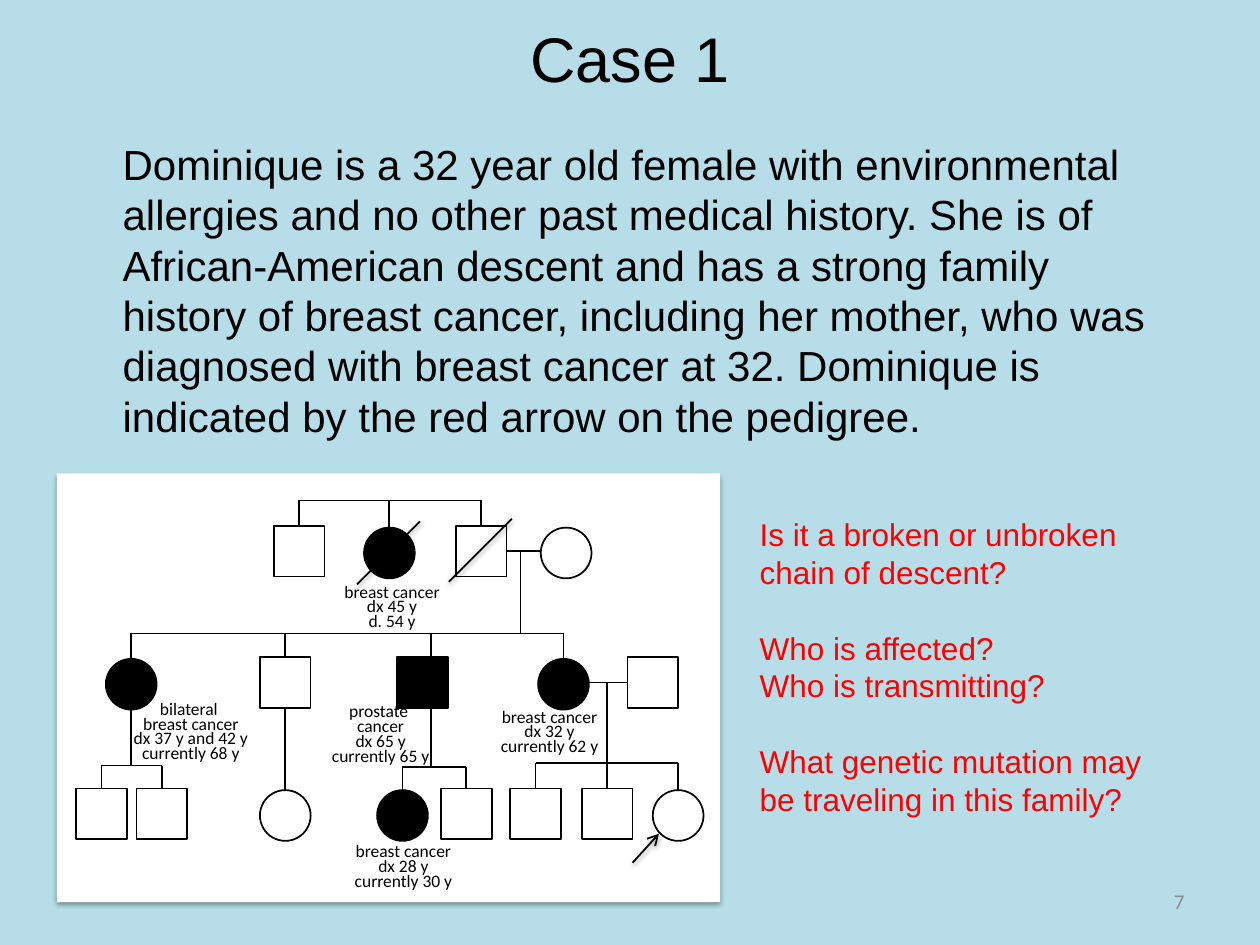
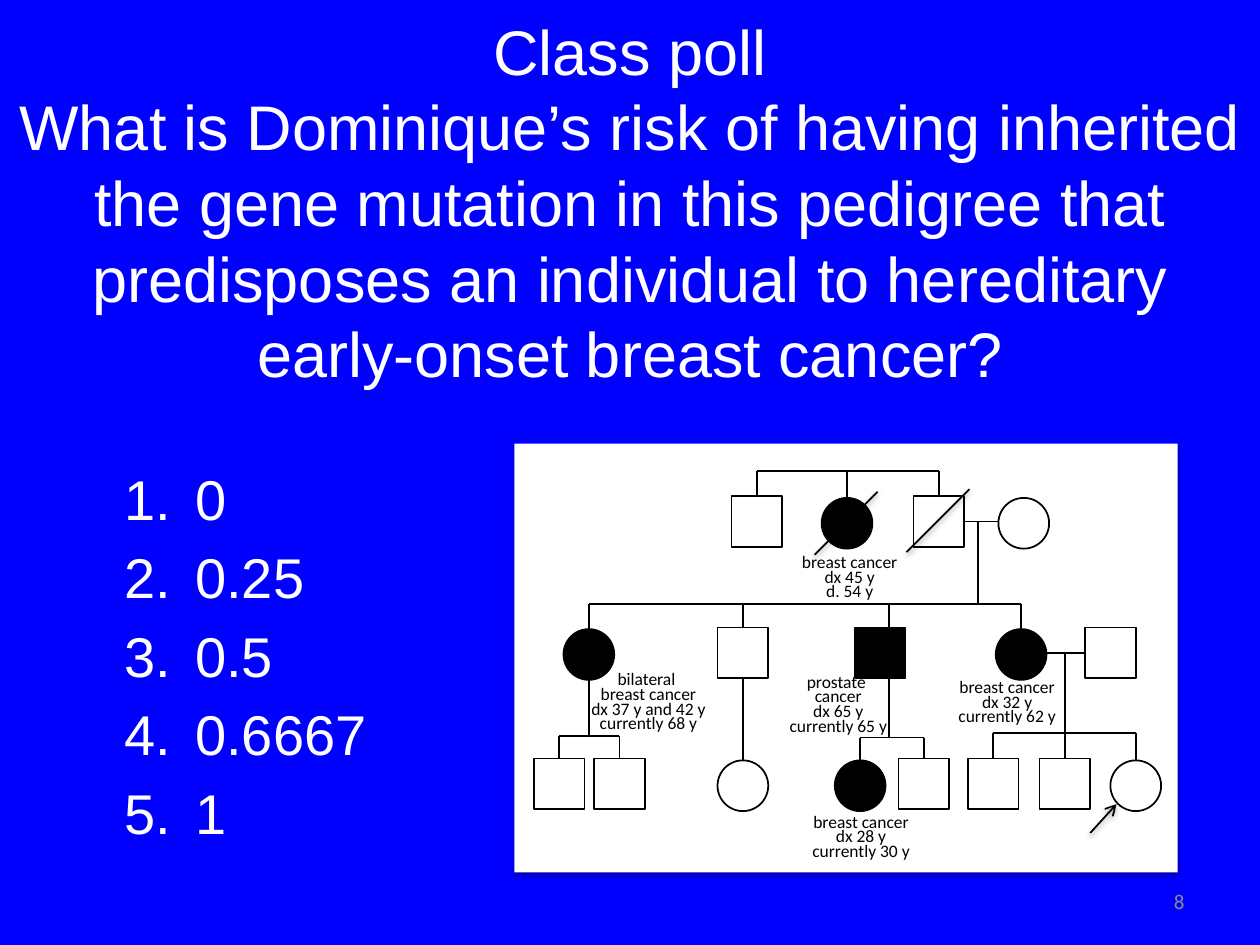
from lxml.etree import SubElement as Sub
from pptx import Presentation
from pptx.dml.color import RGBColor
from pptx.enum.shapes import MSO_CONNECTOR as Wire, MSO_SHAPE as Form
from pptx.enum.text import MSO_ANCHOR as Anchor, MSO_AUTO_SIZE as Fit, PP_ALIGN as Align
from pptx.oxml.ns import qn
from pptx.util import Pt

BLACK = RGBColor(0, 0, 0)
WHITE = RGBColor(255, 255, 255)
RED = RGBColor(255, 0, 0)
GREY = RGBColor(0x8C, 0x8C, 0x8C)
PALE = RGBColor(0xB7, 0xDE, 0xE8)
BLUE = RGBColor(0, 0, 255)

SIDE = 29
TOP, MID, LOW = 30, 105, 180

STORY = (
    "Dominique is a 32 year old female with environmental allergies and no other "
    "past medical history. She is of African-American descent and has a strong "
    "family history of breast cancer, including her mother, who was diagnosed with "
    "breast cancer at 32. Dominique is indicated by the red arrow on the pedigree."
)
ASKS = [
    "Is it a broken or unbroken chain of descent?",
    "Who is affected?",
    "Who is transmitting?",
    "What genetic mutation may be traveling in this family?",
]
POLL = [
    "Class poll",
    "What is Dominique’s risk of having inherited the gene mutation in this pedigree "
    "that predisposes an individual to hereditary early-onset breast cancer?",
]
ODDS = ["0", "0.25", "0.5", "0.6667", "1"]
NOTES = [
    (156, 61, 71, ["breast cancer", "dx 45 y", "d. 54 y"]),
    (36, 128, 81, ["bilateral ", "breast cancer", "dx 37 y and 42 y", "currently 68 y"]),
    (149, 129.5, 72, ["prostate ", "cancer", "dx 65 y", "currently 65 y"]),
    (162, 209.5, 72, ["breast cancer", "dx 28 y", "currently 30 y"]),
    (245.5, 132.5, 72, ["breast cancer", "dx 32 y", "currently 62 y"]),
]


def write(shapes, area, lines, size, color, align=Align.LEFT, face="Arial"):
    box = shapes.add_textbox(*map(Pt, area))
    frame = box.text_frame
    frame.word_wrap = True
    frame.text = "\n".join(lines)
    for para in frame.paragraphs:
        para.alignment = align
        for run in para.runs:
            run.font.name = face
            run.font.size = Pt(size)
            run.font.color.rgb = color
    return frame


def title(slide, area, lines, color):
    frame = write(slide.shapes, area, lines, 36, color, Align.CENTER)
    frame.vertical_anchor = Anchor.MIDDLE


def number(slide, num):
    frame = write(slide.shapes, (516, 500.5, 168, 29), [num], 12, GREY, Align.RIGHT, "Calibri")
    frame.vertical_anchor = Anchor.MIDDLE


def indent(para, left, hang=0):
    props = para._p.get_or_add_pPr()
    props.set("marL", str(Pt(left)))
    props.set("indent", str(-Pt(hang)))
    return props


def cast(effects, alpha, gap):
    shade = Sub(effects, qn("a:outerShdw"), blurRad=str(Pt(3.1)), dist=str(Pt(gap)),
                dir="5400000", rotWithShape="0")
    tint = Sub(shade, qn("a:srgbClr"), val="000000")
    Sub(tint, qn("a:alpha"), val=str(alpha * 1000))


def panel(group):
    card = group.shapes.add_shape(Form.RECTANGLE, 0, 0, Pt(379), Pt(245))
    card.fill.solid()
    card.fill.fore_color.rgb = WHITE
    card.line.fill.background()
    card.shadow.inherit = False
    cast(card._element.spPr.find(qn("a:effectLst")), 35, 1.8)


def person(group, form, x, y, fill=WHITE):
    shape = group.shapes.add_shape(form, Pt(x), Pt(y), Pt(SIDE), Pt(SIDE))
    shape.fill.solid()
    shape.fill.fore_color.rgb = fill
    shape.line.color.rgb = BLACK
    shape.line.width = Pt(1)
    shape.shadow.inherit = False
    return shape


def man(group, x, y, fill=WHITE):
    return person(group, Form.RECTANGLE, x, y, fill)


def woman(group, x, y, fill=WHITE):
    return person(group, Form.OVAL, x, y + 1, fill)


def link(group, x1, y1, x2, y2, shade=False):
    line = group.shapes.add_connector(Wire.STRAIGHT, *map(Pt, (x1, y1, x2, y2)))
    line.line.color.rgb = BLACK
    line.line.width = Pt(1)
    effects = Sub(line._element.spPr, qn("a:effectLst"))
    if shade:
        cast(effects, 38, 1.6)
    return line


def center(shape):
    return shape.left.pt + SIDE / 2


def drop(group, child, y):
    x = center(child)
    link(group, x, y, x, child.top.pt).end_connect(child, 0)


def family(group, kids, y):
    link(group, center(kids[0]), y, center(kids[-1]), y)
    for kid in kids:
        drop(group, kid, y)


def arrow(group, x1, y1, x2, y2):
    line = link(group, x1, y1, x2, y2, shade=True)
    Sub(line.line._get_or_add_ln(), qn("a:tailEnd"), type="arrow")


def note(group, x, y, width, lines):
    area = (x, y, width, 7.2 + 8.5 * len(lines))
    frame = write(group.shapes, area, lines, 10, BLACK, Align.CENTER, "Calibri")
    frame.word_wrap = False
    frame.auto_size = Fit.SHAPE_TO_FIT_TEXT
    for para in frame.paragraphs:
        para.line_spacing = 0.7


def tree(slide, left, top):
    group = slide.shapes.add_group_shape()
    panel(group)

    uncle = man(group, 124, TOP)
    great = woman(group, 175.5, TOP, BLACK)
    grand = man(group, 228, TOP)
    woman(group, 276.5, TOP)

    aunt = woman(group, 28, MID, BLACK)
    son = man(group, 116, MID)
    man(group, 194.5, MID, BLACK)
    mother = woman(group, 275, MID, BLACK)
    father = man(group, 326, MID)

    pair = [man(group, x, LOW) for x in (11, 45.5)]
    niece = woman(group, 116, LOW)
    twins = [woman(group, 183, LOW, BLACK), man(group, 219.5, LOW)]
    elder, brother = [man(group, x, LOW) for x in (259, 300)]
    self = woman(group, 340.5, LOW)

    family(group, [uncle, great, grand], 15.5)
    family(group, [aunt, son, mother], 91.5)
    family(group, pair, 167)
    family(group, twins, 168)
    family(group, [elder, self], 165.5)

    half = SIDE / 2
    link(group, 228 + SIDE, TOP + half, 276.5, TOP + half).begin_connect(grand, 3)
    link(group, 265, TOP + half, 265, 91.5)
    link(group, 275 + SIDE, MID + half, 326, MID + half).end_connect(father, 1)
    drop(group, brother, MID + half)
    link(group, 214, 91.5, 214, MID)
    link(group, 214, MID + SIDE, 214, 168)
    link(group, center(aunt), MID + SIDE + 1, center(aunt), 167)
    line = link(group, center(son), MID + SIDE, center(niece), LOW + 1)
    line.begin_connect(son, 2)
    line.end_connect(niece, 0)

    for x, y in ((260, 26), (207.5, 27.5)):
        link(group, x, y, x - 36, y + 36, shade=True)
    arrow(group, 329, 222.5, 344, 206)
    for item in NOTES:
        note(group, *item)
    group.left, group.top = Pt(left), Pt(top)


def page(deck, color):
    slide = deck.slides.add_slide(deck.slide_layouts[6])
    slide.background.fill.solid()
    slide.background.fill.fore_color.rgb = color
    return slide


def case(deck):
    slide = page(deck, PALE)
    title(slide, (36, -12, 648, 90), ["Case 1"], BLACK)
    body = write(slide.shapes, (36, 75.5, 648, 356), [STORY], 24, BLACK)
    indent(body.paragraphs[0], 27)
    number(slide, "7")
    asks = write(slide.shapes, (427, 291, 233, 204), ASKS, 18, RED)
    for spot in (1, 3):
        asks.paragraphs[spot].space_before = Pt(21.5)
    tree(slide, 32.5, 270.5)


def poll(deck):
    slide = page(deck, BLUE)
    title(slide, (0, 70, 720, 90), POLL, WHITE)
    odds = write(slide.shapes, (64, 265.5, 220, 222), ODDS, 32, WHITE)
    odds.margin_top = odds.margin_bottom = 0
    for spot, para in enumerate(odds.paragraphs):
        if spot:
            para.space_before = Pt(6.4)
        Sub(indent(para, 40.5, 40.5), qn("a:buAutoNum"), type="arabicPeriod")
    number(slide, "8")
    tree(slide, 294, 253.5)


def main():
    deck = Presentation()
    deck.slide_width, deck.slide_height = Pt(720), Pt(540)
    case(deck)
    poll(deck)
    deck.save("out.pptx")


if __name__ == "__main__":
    main()
